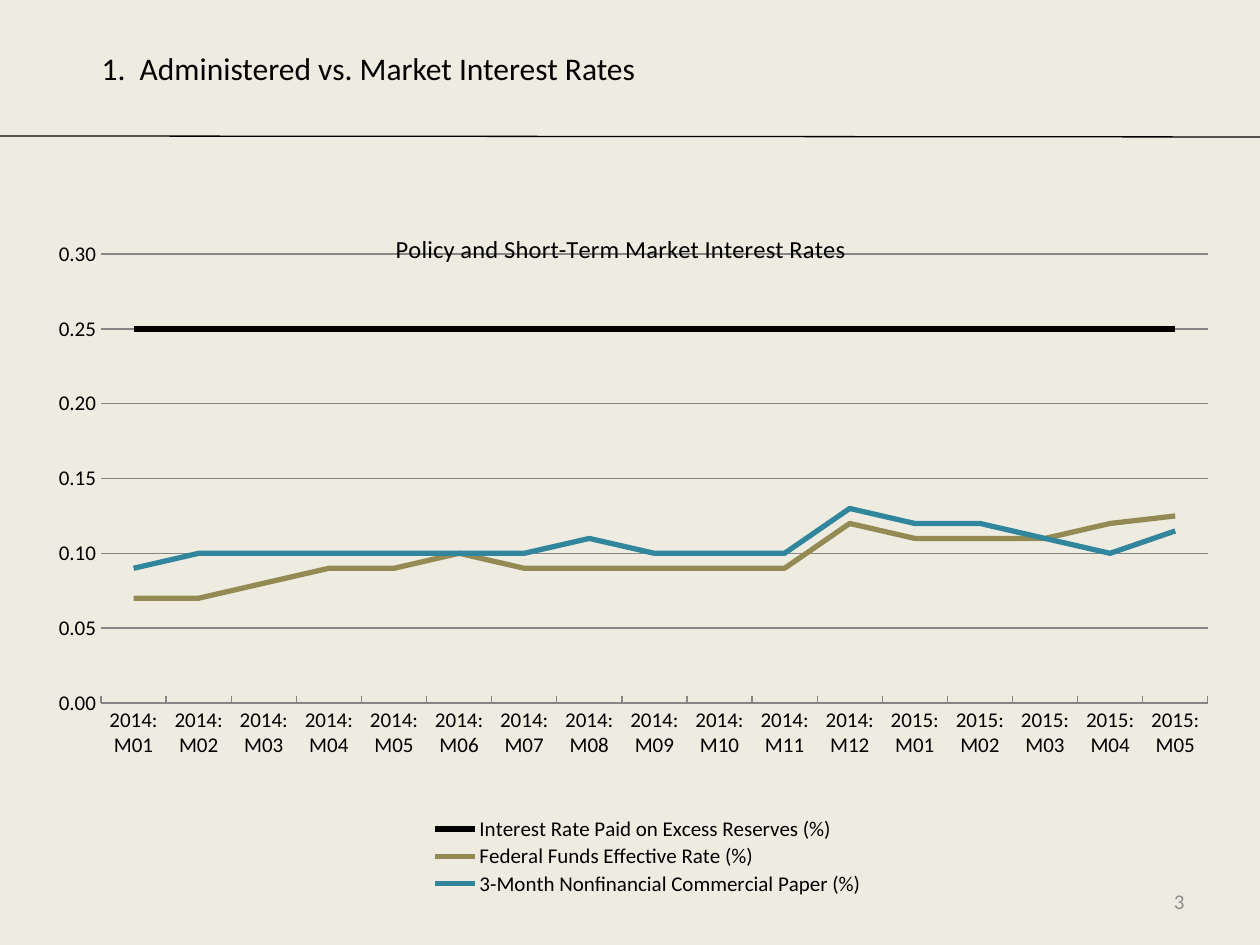
"""Build the slide on administered and market interest rates."""
from dataclasses import dataclass

from lxml import etree
from pptx import Presentation
from pptx import util as u
from pptx.chart.data import CategoryChartData
from pptx.dml.color import RGBColor
from pptx.enum import chart as charts, shapes, text
from pptx.oxml.ns import qn


@dataclass(frozen=True)
class Theme:
    font: str = "Calibri"
    paper: str = "EEECE1"
    ink: str = "000000"
    axis: str = "868686"
    muted: str = "8C8C8C"
    sand: str = "948A54"
    teal: str = "31859C"
    heading: int = 18
    caption: int = 14
    label: int = 12


theme = Theme()
PX = 914400 / 126


def write(frame, wording, size, color=theme.ink, align=None, anchor=None):
    """Put one formatted paragraph into a text frame."""
    paragraph = frame.paragraphs[0]
    run = paragraph.add_run()
    run.text = wording
    run.font.name = theme.font
    run.font.size = u.Pt(size)
    run.font.bold = False
    run.font.color.rgb = RGBColor.from_string(color)
    if align is not None:
        paragraph.alignment = align
    if anchor is not None:
        frame.word_wrap = True
        frame.vertical_anchor = anchor


def place(parent, index, **fractions):
    """Give a chart part a manual layout in fractions of the chart."""
    for old in parent.findall(qn("c:layout")):
        parent.remove(old)
    layout = etree.Element(qn("c:layout"))
    manual = etree.SubElement(layout, qn("c:manualLayout"))
    if parent.tag == qn("c:plotArea"):
        etree.SubElement(manual, qn("c:layoutTarget")).set("val", "inner")
    for side in ("x", "y"):
        etree.SubElement(manual, qn(f"c:{side}Mode")).set("val", "edge")
    for side, fraction in fractions.items():
        etree.SubElement(manual, qn(f"c:{side}")).set("val", str(fraction))
    parent.insert(index, layout)


deck = Presentation()
deck.slide_width, deck.slide_height = u.Emu(int(1260 * PX)), u.Emu(int(945 * PX))
slide = deck.slides.add_slide(deck.slide_layouts[5])
slide.background.fill.solid()
slide.background.fill.fore_color.rgb = RGBColor.from_string(theme.paper)

rule = slide.shapes.add_connector(
    shapes.MSO_CONNECTOR.STRAIGHT, *(u.Emu(int(n * PX)) for n in (0, 136, 1260, 137))
)
rule.line.color.rgb = RGBColor.from_string(theme.ink)
rule.line.width = u.Pt(0.75)
etree.SubElement(rule.line._get_or_add_ln().getparent(), qn("a:effectLst"))

heading = slide.shapes.title
heading.left, heading.top, heading.width, heading.height = (
    u.Emu(int(n * PX)) for n in (89, 43, 1149, 50)
)
write(heading.text_frame, "1.  Administered vs. Market Interest Rates", theme.heading,
      align=text.PP_ALIGN.LEFT, anchor=text.MSO_ANCHOR.MIDDLE)

rates = CategoryChartData(number_format="0.00")
rates.categories = [
    f"{year}:M{month:02d}"
    for year, months in ((2014, 12), (2015, 5))
    for month in range(1, months + 1)
]
rates.add_series("Interest Rate Paid on Excess Reserves (%)", [0.25] * 17)
rates.add_series(
    "Federal Funds Effective Rate (%)",
    [0.07, 0.07, 0.08, 0.09, 0.09, 0.1] + [0.09] * 5 + [0.12, 0.11, 0.11, 0.11, 0.12, 0.125],
)
rates.add_series(
    "3-Month Nonfinancial Commercial Paper (%)",
    [0.09] + [0.1] * 6 + [0.11] + [0.1] * 3 + [0.13, 0.12, 0.12, 0.11, 0.1, 0.115],
)
chart = slide.shapes.add_chart(
    charts.XL_CHART_TYPE.LINE, *(u.Emu(int(n * PX)) for n in (33, 199, 1194, 707)), rates
).chart
chart.font.name = theme.font
chart.font.size = u.Pt(theme.label)
chart.font.color.rgb = RGBColor.from_string(theme.ink)

chart.has_title = True
write(chart.chart_title.text_frame, "Policy and Short-Term Market Interest Rates", theme.caption)
chart.chart_title.include_in_layout = False
place(chart.chart_title._element, 1, x=0.3, y=0.04)
place(chart.plots[0]._element.getparent(), 0, x=0.057, y=0.078, w=0.927, h=0.635)

chart.has_legend = True
chart.legend.position = charts.XL_LEGEND_POSITION.BOTTOM
chart.legend.include_in_layout = False
place(chart.legend._element, 1, x=0.33, y=0.87, w=0.37, h=0.12)

months, percent = chart.category_axis, chart.value_axis
months.major_tick_mark = charts.XL_TICK_MARK.INSIDE
percent.major_tick_mark = charts.XL_TICK_MARK.NONE
percent.minimum_scale, percent.maximum_scale, percent.major_unit = 0, 0.3, 0.05
percent.tick_labels.number_format = "0.00"
percent.tick_labels.number_format_is_linked = False
percent.format.line.fill.background()
for line in (months.format.line, percent.major_gridlines.format.line):
    line.color.rgb = RGBColor.from_string(theme.axis)
    line.width = u.Pt(0.75)

chart.plots[0].vary_by_categories = False
for rate, color in zip(chart.plots[0].series, (theme.ink, theme.sand, theme.teal)):
    rate.smooth = False
    rate.marker.style = charts.XL_MARKER_STYLE.NONE
    rate.format.line.color.rgb = RGBColor.from_string(color)
    rate.format.line.width = u.Pt(3)

page = slide.shapes.add_textbox(*(u.Emu(int(n * PX)) for n in (903, 876, 294, 50)))
write(page.text_frame, "3", theme.label, color=theme.muted,
      align=text.PP_ALIGN.RIGHT, anchor=text.MSO_ANCHOR.MIDDLE)

deck.save("out.pptx")
